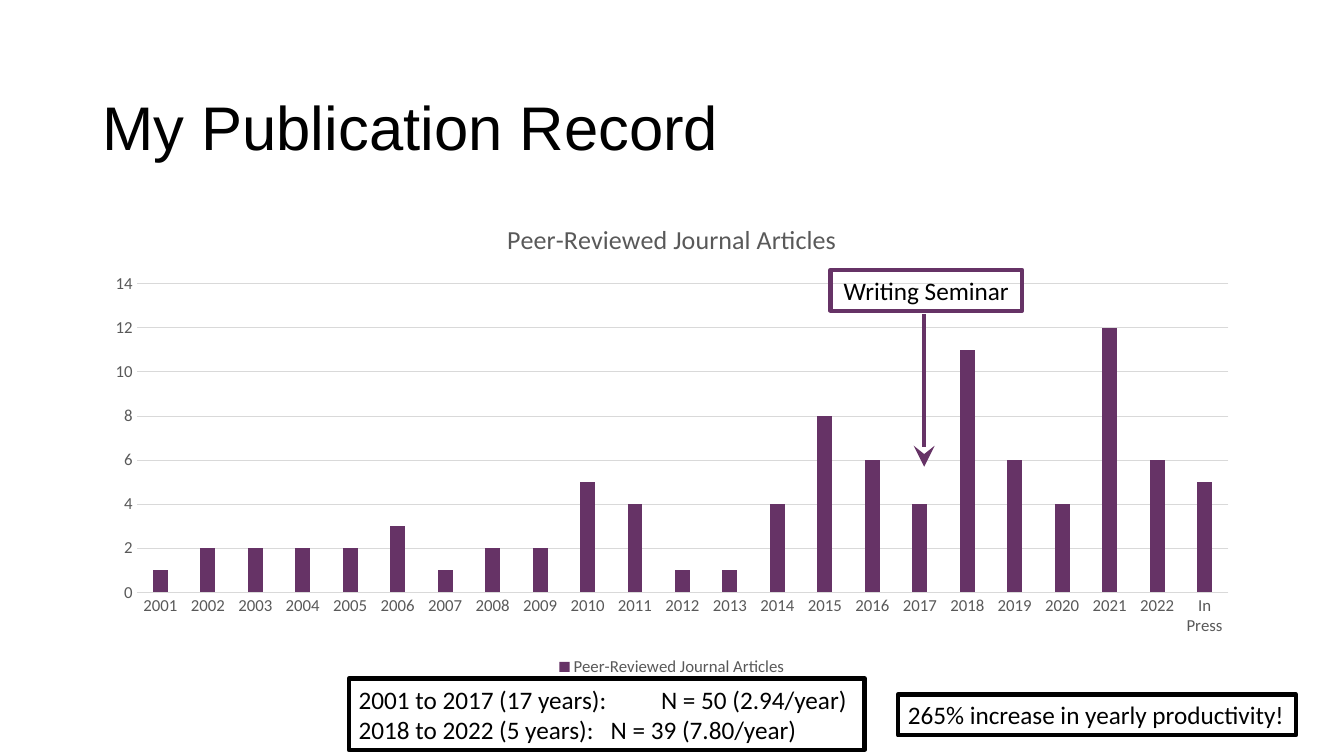
from dataclasses import dataclass

from lxml.etree import SubElement
from pptx import Presentation
from pptx.chart.data import CategoryChartData
from pptx.dml.color import RGBColor
from pptx.enum.chart import XL_CHART_TYPE, XL_LEGEND_POSITION, XL_TICK_MARK
from pptx.enum.shapes import MSO_CONNECTOR, MSO_SHAPE
from pptx.enum.text import MSO_ANCHOR, PP_ALIGN
from pptx.oxml.ns import qn
from pptx.util import Cm, Pt

PLUM, BLACK, WHITE, GREY, PALE = "663366", "000000", "FFFFFF", "595959", "D9D9D9"
TOPIC = "Peer-Reviewed Journal Articles"
YEARS = [str(year) for year in range(2001, 2023)] + ["In Press"]
COUNTS = [1, 2, 2, 2, 2, 3, 1, 2, 2, 5, 4, 1, 1, 4, 8, 6, 4, 11, 6, 4, 12, 6, 5]


@dataclass
class Note:
    left: float
    top: float
    width: float
    height: float
    lines: list[str]
    edge: str = BLACK
    fill: str | None = WHITE
    align: PP_ALIGN = PP_ALIGN.LEFT


NOTES = [
    Note(20.93, 6.8, 4.83, 1.03, ["Writing Seminar"], PLUM, None, PP_ALIGN.CENTER),
    Note(8.79, 17.1, 13, 1.8, ["2001 to 2017 (17 years): \tN = 50 (2.94/year)",
                               "2018 to 2022 (5 years): \tN = 39 (7.80/year)"]),
    Note(22.63, 17.5, 10.03, 1.03, ["265% increase in yearly productivity!"]),
]


def paint(code: str) -> RGBColor:
    return RGBColor.from_string(code)


def style(font, size: float, code: str, face: str = "Calibri") -> None:
    font.size, font.name, font.bold = Pt(size), face, False
    font.color.rgb = paint(code)


def stroke(line, code: str, width: float) -> None:
    line.color.rgb = paint(code)
    line.width = Pt(width)


def add_title(slide) -> None:
    box = slide.shapes.add_textbox(Cm(2.33), Cm(1.88), Cm(29.21), Cm(2.8))
    frame = box.text_frame
    frame.word_wrap = True
    frame.vertical_anchor = MSO_ANCHOR.MIDDLE
    frame.paragraphs[0].line_spacing = 0.9
    run = frame.paragraphs[0].add_run()
    run.text = "My Publication Record"
    style(run.font, 44, BLACK, "Arial")


def add_bars(slide) -> None:
    data = CategoryChartData()
    data.categories = YEARS
    data.add_series(TOPIC, COUNTS)
    chart = slide.shapes.add_chart(XL_CHART_TYPE.COLUMN_CLUSTERED, Cm(2.33), Cm(5.07),
                                   Cm(29.21), Cm(12.09), data).chart
    style(chart.font, 12, GREY)

    # Heading and legend
    chart.has_title = True
    run = chart.chart_title.text_frame.paragraphs[0].add_run()
    run.text = TOPIC
    style(run.font, 18.6, GREY)
    chart.chart_title.include_in_layout = False
    chart.has_legend = True
    chart.legend.position = XL_LEGEND_POSITION.BOTTOM
    chart.legend.include_in_layout = False
    style(chart.legend.font, 12, GREY)

    # Columns
    plot = chart.plots[0]
    plot.gap_width, plot.overlap, plot.vary_by_categories = 219, -27, False
    fill = plot.series[0].format.fill
    fill.solid()
    fill.fore_color.rgb = paint(PLUM)

    # Axes
    for axis in (chart.category_axis, chart.value_axis):
        axis.major_tick_mark = axis.minor_tick_mark = XL_TICK_MARK.NONE
        style(axis.tick_labels.font, 12, GREY)
    stroke(chart.category_axis.format.line, PALE, 0.75)
    scale = chart.value_axis
    scale.minimum_scale, scale.maximum_scale, scale.major_unit = 0, 14, 2
    scale.format.line.fill.background()
    scale.has_major_gridlines = True
    stroke(scale.major_gridlines.format.line, PALE, 0.75)


def add_note(slide, note: Note) -> None:
    box = slide.shapes.add_shape(MSO_SHAPE.RECTANGLE, Cm(note.left), Cm(note.top),
                                 Cm(note.width), Cm(note.height))
    box.shadow.inherit = False
    stroke(box.line, note.edge, 3)
    if note.fill:
        box.fill.solid()
        box.fill.fore_color.rgb = paint(note.fill)
    else:
        box.fill.background()
    frame = box.text_frame
    frame.word_wrap = True
    for at, line in enumerate(note.lines):
        para = frame.add_paragraph() if at else frame.paragraphs[0]
        para.alignment = note.align
        run = para.add_run()
        run.text = line
        style(run.font, 18, BLACK)


def add_arrow(slide) -> None:
    arrow = slide.shapes.add_connector(MSO_CONNECTOR.STRAIGHT, Cm(23.29), Cm(7.92),
                                       Cm(23.29), Cm(11.76))
    stroke(arrow.line, PLUM, 3)
    SubElement(arrow.line._get_or_add_ln(), qn("a:tailEnd"), type="stealth", w="lg", len="lg")
    SubElement(arrow._element.spPr, qn("a:effectLst"))


def main() -> None:
    deck = Presentation()
    deck.slide_width, deck.slide_height = Cm(33.87), Cm(19.05)
    slide = deck.slides.add_slide(deck.slide_layouts[6])
    add_title(slide)
    add_bars(slide)
    for note in NOTES:
        add_note(slide, note)
    add_arrow(slide)
    deck.save("out.pptx")


if __name__ == "__main__":
    main()
